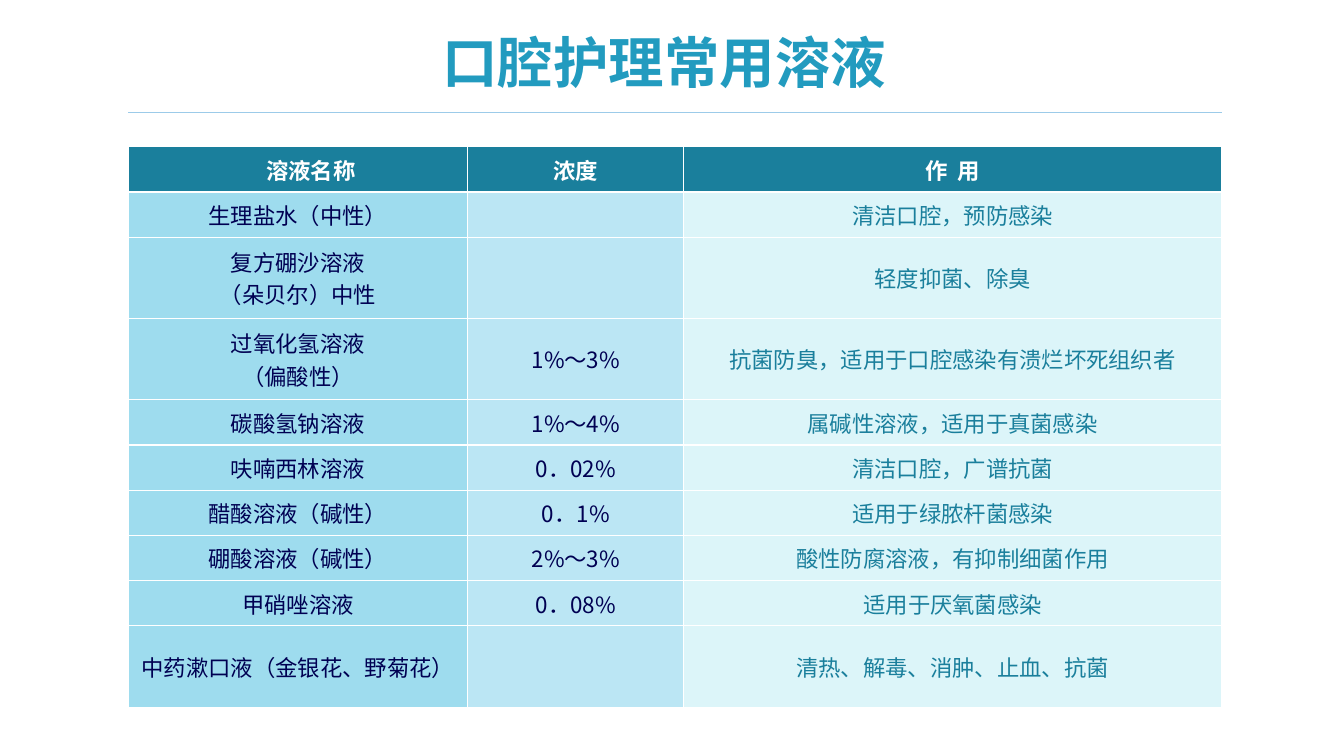
"""Build a slide with a table of common oral care solutions."""
import pptx
import pptx.dml.color
import pptx.enum.shapes
import pptx.enum.text
import pptx.oxml
import pptx.oxml.ns
import pptx.util

Cm = pptx.util.Cm
Pt = pptx.util.Pt
RGBColor = pptx.dml.color.RGBColor
CENTER = pptx.enum.text.PP_ALIGN.CENTER
MIDDLE = pptx.enum.text.MSO_ANCHOR.MIDDLE

WHITE = RGBColor(0xFF, 0xFF, 0xFF)
BLUE = RGBColor(0x22, 0x9B, 0xBF)
TEAL = RGBColor(0x1A, 0x7F, 0x9C)
NAVY = RGBColor(0x00, 0x00, 0x52)
SKY = RGBColor(0x9C, 0xCB, 0xE9)
FILLS = [RGBColor(0x9E, 0xDC, 0xEE), RGBColor(0xBB, 0xE6, 0xF4), RGBColor(0xDC, 0xF5, 0xF9)]
INKS = [NAVY, NAVY, TEAL]

FONT = "Noto Sans CJK SC"
LEFT = Cm(3.23)
WIDTHS = [Cm(8.56), Cm(5.44), Cm(13.56)]
LOW = Cm(1.14)
HIGH = Cm(2.05)
INDENT = Cm(0.97)

HEADS = ["溶液名称", "浓度", "作  用"]
ROWS = [
    (LOW, "生理盐水（中性）", "", "清洁口腔，预防感染"),
    (HIGH, "复方硼沙溶液\n（朵贝尔）中性", "", "轻度抑菌、除臭"),
    (HIGH, "过氧化氢溶液\n（偏酸性）", "1%～3%", "抗菌防臭，适用于口腔感染有溃烂坏死组织者"),
    (LOW, "碳酸氢钠溶液", "1%～4%", "属碱性溶液，适用于真菌感染"),
    (LOW, "呋喃西林溶液", "0．02%", "清洁口腔，广谱抗菌"),
    (LOW, "醋酸溶液（碱性）", "0．1%", "适用于绿脓杆菌感染"),
    (LOW, "硼酸溶液（碱性）", "2%～3%", "酸性防腐溶液，有抑制细菌作用"),
    (LOW, "甲硝唑溶液", "0．08%", "适用于厌氧菌感染"),
    (HIGH, "中药漱口液（金银花、野菊花）", "", "清热、解毒、消肿、止血、抗菌"),
]


def add_text(para, text, face, size, color, bold):
    """Add one centred run to a paragraph."""
    para.alignment = CENTER
    run = para.add_run()
    run.text = text
    font = run.font
    font.name = face
    font.size = Pt(size)
    font.bold = bold
    font.color.rgb = color
    east = pptx.oxml.parse_xml(f'<a:ea {pptx.oxml.ns.nsdecls("a")} typeface="{FONT}"/>')
    font._element.append(east)


def set_title(slide):
    """Place and fill the title."""
    title = slide.shapes.title
    title.left, title.top, title.width, title.height = Cm(6.5), Cm(0.99), Cm(20.83), Cm(1.32)
    frame = title.text_frame
    frame.word_wrap = True
    frame.auto_size = pptx.enum.text.MSO_AUTO_SIZE.NONE
    frame.vertical_anchor = MIDDLE
    frame.margin_left, frame.margin_right = Cm(0.25), Cm(0.6)
    para = frame.paragraphs[0]
    para.line_spacing = 0.9
    add_text(para, "口腔护理常用溶液", "Arial", 39.6, BLUE, True)


def add_rule(slide):
    """Draw the thin line below the title."""
    kind = pptx.enum.shapes.MSO_CONNECTOR.STRAIGHT
    rule = slide.shapes.add_connector(kind, LEFT, Cm(2.84), LEFT + sum(WIDTHS), Cm(2.84))
    rule.line.color.rgb = SKY
    rule.line.width = Pt(0.5)
    rule._element.spPr.append(pptx.oxml.parse_xml(f'<a:effectLst {pptx.oxml.ns.nsdecls("a")}/>'))


def set_cell(cell, text, fill, ink, bold=False):
    """Give a cell its borders, fill and text."""
    props = cell._tc.get_or_add_tcPr()
    for side in "LRTB":
        props.append(pptx.oxml.parse_xml(
            f'<a:ln{side} {pptx.oxml.ns.nsdecls("a")} w="{Pt(1)}">'
            f'<a:solidFill><a:srgbClr val="{WHITE}"/></a:solidFill></a:ln{side}>'))
    cell.fill.solid()
    cell.fill.fore_color.rgb = fill
    cell.vertical_anchor = MIDDLE
    if not text:
        return
    frame = cell.text_frame
    for num, line in enumerate(text.split("\n")):
        para = frame.add_paragraph() if num else frame.paragraphs[0]
        layout = para._p.get_or_add_pPr()
        layout.set("marL", str(INDENT))
        layout.set("indent", str(-INDENT))
        add_text(para, line, FONT, 16, ink, bold)


def add_grid(slide):
    """Add the table of solutions."""
    heights = [LOW] + [row[0] for row in ROWS]
    frame = slide.shapes.add_table(
        len(heights), len(WIDTHS), LEFT, Cm(3.7), sum(WIDTHS), sum(heights))
    table = frame.table
    table.horz_banding = False
    for col, width in zip(table.columns, WIDTHS):
        col.width = width
    for row, height in zip(table.rows, heights):
        row.height = height
    for col, head in enumerate(HEADS):
        set_cell(table.cell(0, col), head, TEAL, WHITE, True)
    table.cell(0, 0).margin_left = Cm(0.9)
    for num, (_, *texts) in enumerate(ROWS, 1):
        for col, text in enumerate(texts):
            set_cell(table.cell(num, col), text, FILLS[col], INKS[col])


def main():
    """Build and save the slide."""
    deck = pptx.Presentation()
    deck.slide_width, deck.slide_height = Cm(33.87), Cm(19.05)
    slide = deck.slides.add_slide(deck.slide_layouts[5])
    set_title(slide)
    add_rule(slide)
    add_grid(slide)
    deck.save("out.pptx")


if __name__ == "__main__":
    main()
